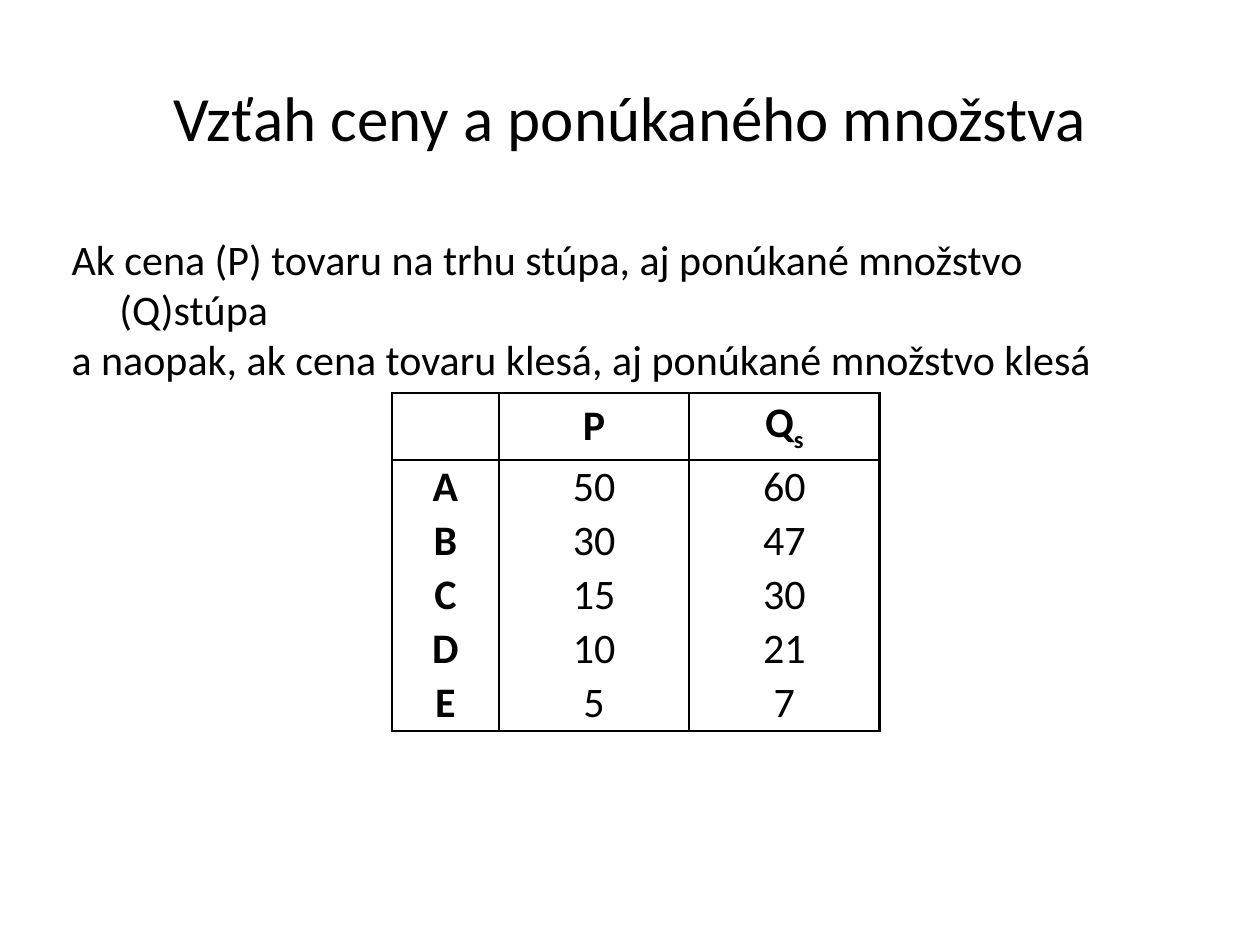
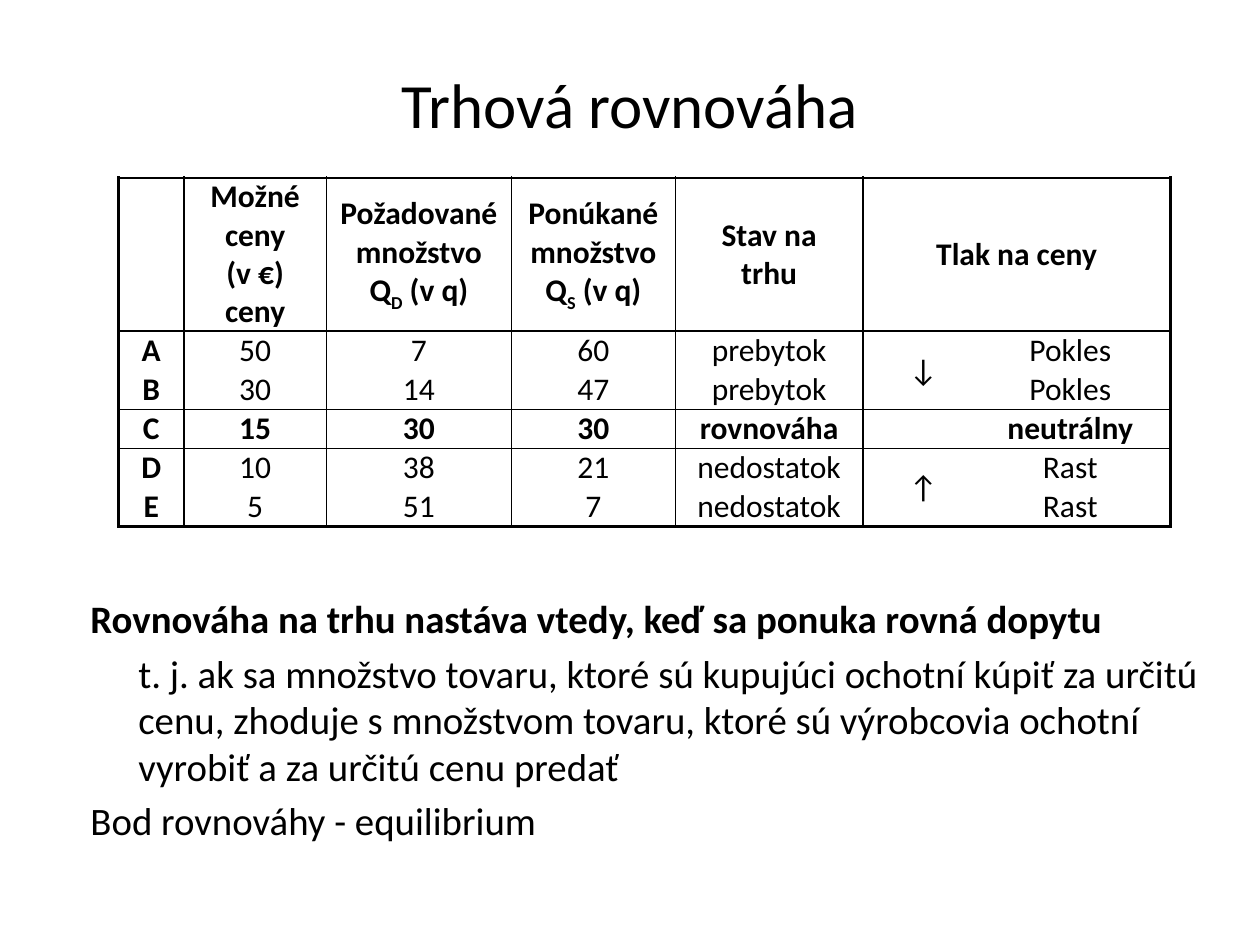
from lxml.etree import SubElement as Sub
from pptx import Presentation
from pptx.dml.color import RGBColor as RGB
from pptx.enum.text import MSO_ANCHOR as Anchor, PP_ALIGN as Align
from pptx.oxml import parse_xml
from pptx.oxml.ns import nsdecls, qn
from pptx.util import Inches, Pt


def color(hex_code):
    return RGB.from_string(hex_code)


def apply(target, values):
    for name, value in values.items():
        setattr(target, name, value)


class Lesson:
    """Slide builder that keeps the shared style and the current slide."""

    INK, PAPER, FONT = "000000", "FFFFFF", "Calibri"
    CELL = {"margin_left": Inches(0.05), "margin_right": Inches(0.05),
            "margin_top": 0, "margin_bottom": 0, "vertical_anchor": Anchor.MIDDLE}

    def __init__(self):
        self.deck = Presentation()
        apply(self.deck, {"slide_width": Inches(10), "slide_height": Inches(7.5)})

    def new_slide(self):
        self.slide = self.deck.slides.add_slide(self.deck.slide_layouts[6])
        background = self.slide.background.fill
        background.solid()
        background.fore_color.rgb = color(self.PAPER)

    def add_text(self, paragraph, text, size, bold=False):
        for i, part in enumerate(text.split("_")):
            if not part:
                continue
            run = paragraph.add_run()
            run.text = part
            apply(run.font, {"name": self.FONT, "size": Pt(size), "bold": bold})
            run.font.color.rgb = color(self.INK)
            if i % 2:
                run.font._element.set("baseline", "-25000")

    def text_frame(self, left, top, width, height, values):
        box = self.slide.shapes.add_textbox(*map(Inches, (left, top, width, height)))
        apply(box.text_frame, {"word_wrap": True, **values})
        return box.text_frame

    def title(self, text, top, height):
        frame = self.text_frame(0.5, top, 9, height, {"vertical_anchor": Anchor.MIDDLE})
        heading = frame.paragraphs[0]
        heading.alignment = Align.CENTER
        self.add_text(heading, text, 36)

    def body(self, lines, place, size, gap=0, margin_top=0.05):
        frame = self.text_frame(*place, {"margin_top": Inches(margin_top)})
        for i, (text, bold, hanging) in enumerate(lines):
            line = frame.add_paragraph() if i else frame.paragraphs[0]
            line.space_before = Pt(gap if i else 0)
            indent = Inches(-0.38 if hanging else 0)
            properties = line._p.get_or_add_pPr()
            properties.set("marL", str(Inches(0.38)))
            properties.set("indent", str(indent))
            self.add_text(line, text, size, bold)

    def borders(self, cell, weights):
        properties = cell._tc.get_or_add_tcPr()
        for i, (side, weight) in enumerate(zip("LRTB", weights)):
            rule = parse_xml(f'<a:ln{side} {nsdecls("a")} w="{Pt(weight)}"/>')
            if weight:
                fill = Sub(rule, qn("a:solidFill"))
                Sub(fill, qn("a:srgbClr"), val=self.INK)
            else:
                Sub(rule, qn("a:noFill"))
            properties.insert(i, rule)

    def table(self, rows, corner, widths, heights, size, across, down,
              bold_rows=(0,), spans=()):
        """Draw a table; across and down give the rule weight at each boundary."""
        extent = sum(widths), sum(heights)
        grid = self.slide.shapes.add_table(
            len(rows), len(widths), *map(Inches, (*corner, *extent))).table
        apply(grid, {"first_row": False, "horz_banding": False})
        for column, width in zip(grid.columns, widths):
            column.width = Inches(width)
        for row, height in zip(grid.rows, heights):
            row.height = Inches(height)
        for first, last in spans:
            grid.cell(*first).merge(grid.cell(*last))
        for r, texts in enumerate(rows):
            for c, text in enumerate(texts):
                cell = grid.cell(r, c)
                apply(cell, self.CELL)
                cell.fill.background()
                tall, wide = ((cell.span_height, cell.span_width)
                              if cell.is_merge_origin else (1, 1))
                self.borders(cell, (down[c], down[c + wide], across[r], across[r + tall]))
                if not text:
                    continue
                for i, line in enumerate(text.split("\n")):
                    frame = cell.text_frame
                    paragraph = frame.add_paragraph() if i else frame.paragraphs[0]
                    paragraph.alignment = Align.CENTER
                    self.add_text(paragraph, line, size, r in bold_rows or c == 0)
        return grid


def supply_slide(lesson):
    lesson.new_slide()
    lesson.title("Vzťah ceny a ponúkaného množstva", 0.3, 1.25)
    lesson.body(
        [("Ak cena (P) tovaru na trhu stúpa, aj ponúkané množstvo (Q)stúpa", False, True),
         ("a naopak, ak cena tovaru klesá, aj ponúkané množstvo klesá", False, True)],
        (0.47, 1.8, 9, 4.95), 24)
    supply = [("", "P", "Q_s_"), ("A", "50", "60"), ("B", "30", "47"),
              ("C", "15", "30"), ("D", "10", "21"), ("E", "5", "7")]
    lesson.table(supply, (3.11, 3.12), (0.85, 1.51, 1.51), [0.53] + [0.43] * 5, 24,
                 across=(1.5, 1.5, 0, 0, 0, 0, 1.5), down=(1.5, 1.5, 1, 1.5))


def equilibrium_slide(lesson):
    lesson.new_slide()
    lesson.title("Trhová rovnováha", 0.46, 0.72)
    lesson.body(
        [("Rovnováha na trhu nastáva vtedy, keď sa ponuka rovná dopytu", True, True),
         ("t. j. ak sa množstvo tovaru, ktoré sú kupujúci ochotní kúpiť za určitú cenu, "
          "zhoduje s množstvom tovaru, ktoré sú výrobcovia ochotní vyrobiť "
          "a za určitú cenu predať", False, False),
         ("Bod rovnováhy - equilibrium", False, True)],
        (0.62, 4.22, 9, 2.45), 22.2, gap=4.5, margin_top=0.5)
    market = [
        ("", "Možné\nceny\n(v €)\nceny", "Požadované\nmnožstvo\nQ_D_ (v q)",
         "Ponúkané\nmnožstvo\nQ_S_ (v q)", "Stav na\ntrhu", "Tlak na ceny", ""),
        ("A", "50", "7", "60", "prebytok", "↓", "Pokles"),
        ("B", "30", "14", "47", "prebytok", "", "Pokles"),
        ("C", "15", "30", "30", "rovnováha", "", "neutrálny"),
        ("D", "10", "38", "21", "nedostatok", "↑", "Rast"),
        ("E", "5", "51", "7", "nedostatok", "", "Rast"),
    ]
    grid = lesson.table(
        market, (0.94, 1.41), (0.52, 1.13, 1.47, 1.3, 1.49, 0.85, 1.59),
        [1.22] + [0.31] * 5, 18,
        across=(1.5, 1.5, 0, 1, 1, 0, 1.5), down=(1.5, 1.5, 1, 1, 1, 1, 0, 1.5),
        bold_rows=(0, 3),
        spans=[((0, 5), (0, 6)), ((1, 5), (2, 5)), ((4, 5), (5, 5))])
    for arrow_row in (1, 4):
        grid.cell(arrow_row, 5).margin_left = Inches(0.16)


def main():
    lesson = Lesson()
    supply_slide(lesson)
    equilibrium_slide(lesson)
    lesson.deck.save("out.pptx")


if __name__ == "__main__":
    main()
